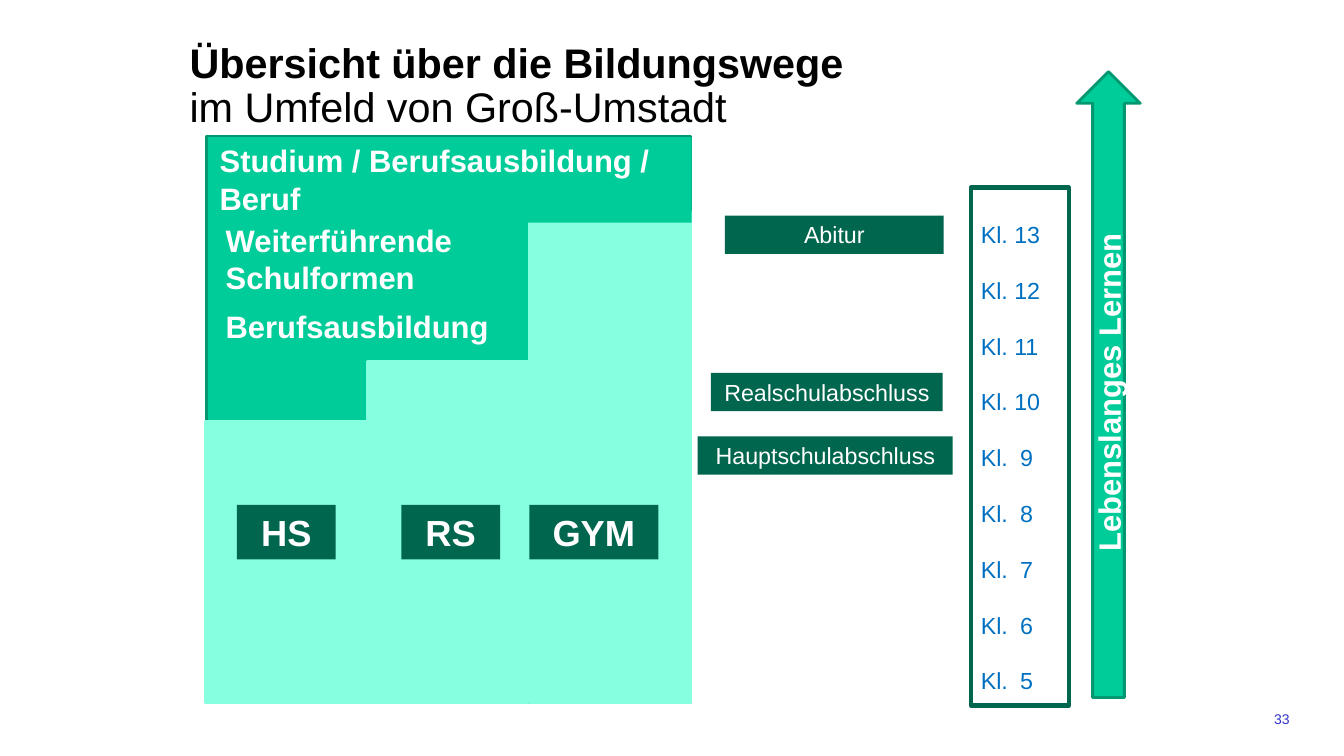
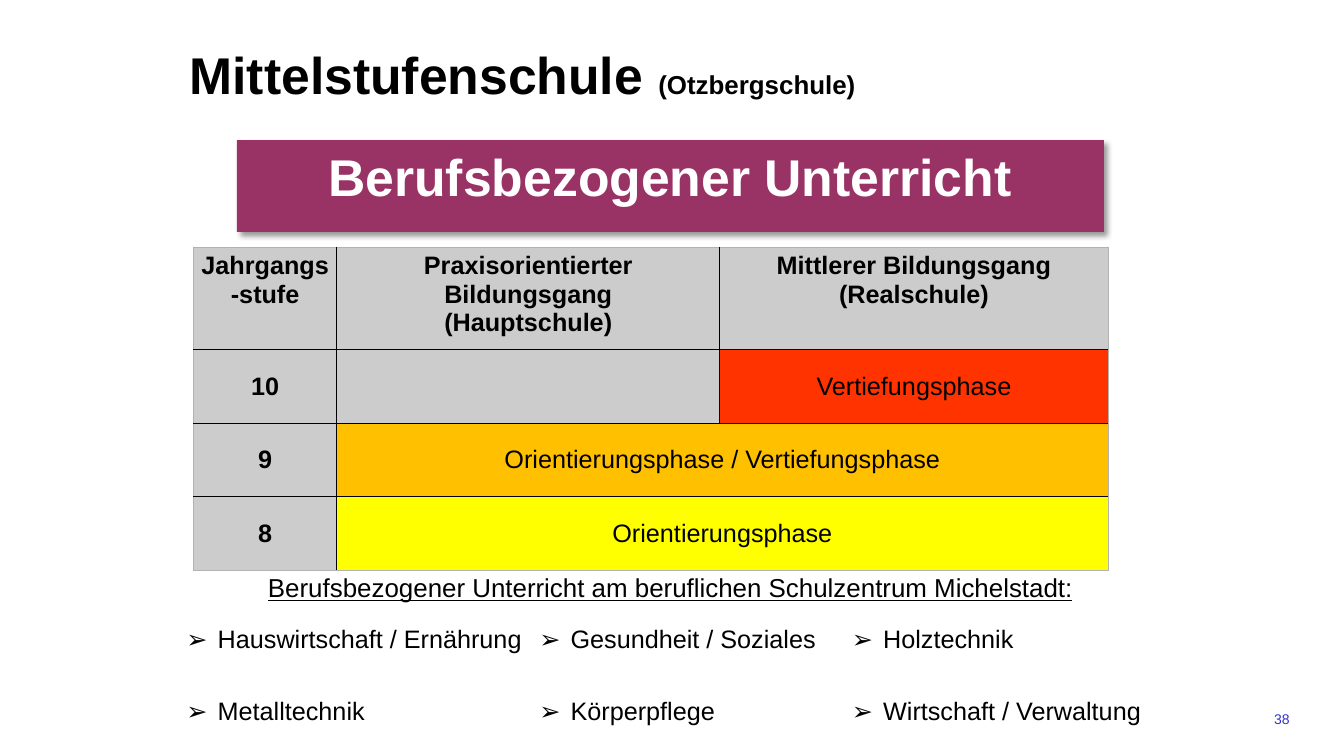
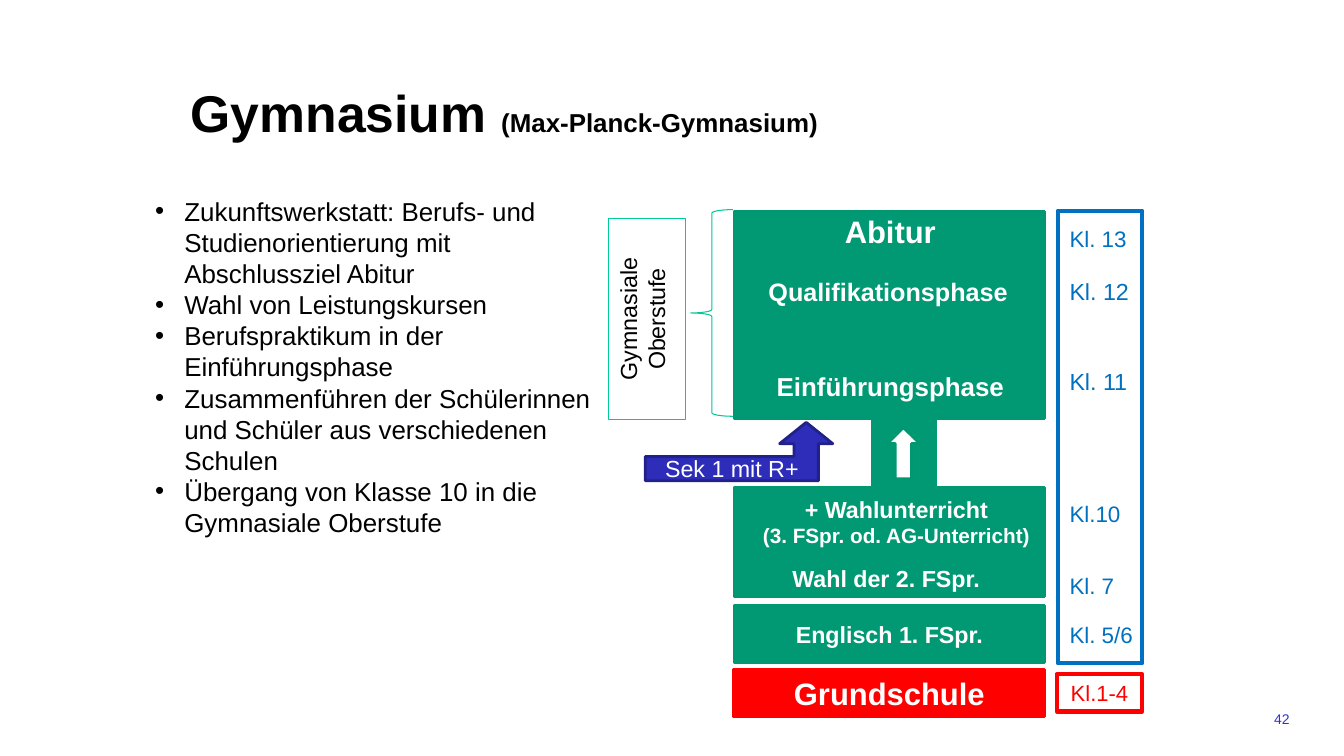
from dataclasses import dataclass
from typing import NamedTuple, Optional, Sequence, Union

import pptx
import pptx.dml.color
import pptx.enum.shapes
import pptx.enum.text
import pptx.oxml
import pptx.oxml.ns
import pptx.util

Inches = pptx.util.Inches
Pt = pptx.util.Pt
SHAPE = pptx.enum.shapes.MSO_SHAPE
ALIGN = pptx.enum.text.PP_ALIGN
ANCHOR = pptx.enum.text.MSO_ANCHOR
qn = pptx.oxml.ns.qn

FONT = "Arial"
COLORS = {
    "black": "000000", "white": "FFFFFF", "number": "3333CC",
    "green": "00CC99", "edge": "009771", "mint": "85FFE0", "forest": "00664D",
    "school": "009973", "brace": "00C896", "blue": "0070C0", "red": "FF0000",
    "indigo": "2D2DB9", "navy": "212189", "plum": "993366",
    "gray": "CCCCCC", "rim": "B2B2B2", "deepening": "FF3300",
    "mixed": "FFC000", "orientation": "FFFF00",
}
NO_STYLE = "{2D5ABB26-0587-4C30-8999-92F81FD0307C}"


class Area(NamedTuple):
    left: float
    top: float
    width: float
    height: float

    def lengths(self) -> list:
        return [Inches(value) for value in self]


class Run(NamedTuple):
    text: str
    size: Optional[float] = None
    bold: Optional[bool] = None


Paragraph = Union[str, Sequence[Run]]


@dataclass
class Label:
    text: str
    area: Area
    size: float = 16.6


@dataclass
class Cell:
    text: str
    fill: str
    bold: bool = False
    span: int = 1


def rgb(name: str) -> pptx.dml.color.RGBColor:
    return pptx.dml.color.RGBColor.from_string(COLORS[name])


def xml(markup: str):
    space = 'xmlns:a="http://schemas.openxmlformats.org/drawingml/2006/main"'
    tag, rest = markup[1:].split(" ", 1)
    return pptx.oxml.parse_xml(f"<{tag} {space} {rest}")


# Text
def write(frame, paragraphs: Sequence[Paragraph], *, size: float = 16.6,
          color: str = "white", bold: bool = False, underline: bool = False,
          align=ALIGN.LEFT, spacing: Optional[float] = None,
          bullet: str = "", indent: float = 0, tab: float = 0) -> None:
    for index, content in enumerate(paragraphs):
        paragraph = frame.paragraphs[0] if index == 0 else frame.add_paragraph()
        properties = paragraph._p.get_or_add_pPr()
        if bullet:
            properties.set("marL", str(Inches(indent)))
            properties.set("indent", str(-Inches(indent)))
            properties.append(xml(f'<a:buFont typeface="{FONT}"/>'))
            properties.append(xml(f'<a:buChar char="{bullet}"/>'))
        if tab:
            properties.append(xml(
                f'<a:tabLst ><a:tab pos="{Inches(tab)}" algn="l"/></a:tabLst>'))
        paragraph.alignment = align
        if spacing:
            paragraph.line_spacing = spacing
        for part in [Run(content)] if isinstance(content, str) else content:
            if part.text == "\n":
                paragraph.add_line_break()
                continue
            run = paragraph.add_run()
            run.text = part.text
            run.font.name = FONT
            run.font.size = Pt(part.size or size)
            run.font.bold = bold if part.bold is None else part.bold
            run.font.underline = underline
            run.font.color.rgb = rgb(color)


def set_frame(frame, anchor=ANCHOR.TOP, upward: bool = False) -> None:
    frame.word_wrap = True
    frame.auto_size = pptx.enum.text.MSO_AUTO_SIZE.NONE
    frame.vertical_anchor = anchor
    if upward:
        frame._txBody.bodyPr.set("vert", "vert270")


def add_text(slide, area: Area, paragraphs: Sequence[Paragraph], **style) -> None:
    frame = slide.shapes.add_textbox(*area.lengths()).text_frame
    set_frame(frame)
    write(frame, paragraphs, **style)


# Shapes
def add_block(slide, area: Area, paragraphs: Sequence[Paragraph] = (), *,
              fill: str = "", line: str = "", weight: float = 2,
              kind=SHAPE.RECTANGLE, anchor=ANCHOR.TOP, upward: bool = False,
              align=ALIGN.CENTER, **style):
    block = slide.shapes.add_shape(kind, *area.lengths())
    block.shadow.inherit = False
    if fill:
        block.fill.solid()
        block.fill.fore_color.rgb = rgb(fill)
    else:
        block.fill.background()
    if line:
        block.line.color.rgb = rgb(line)
        block.line.width = Pt(weight)
    else:
        block.line.fill.background()
    set_frame(block.text_frame, anchor, upward)
    write(block.text_frame, paragraphs, align=align, **style)
    return block


# Shared slide frame: title and page number
def start_slide(deck, number: int, area: Area, title: Sequence[Run], *,
                size: float = 36.9, anchor=ANCHOR.TOP):
    slide = deck.slides.add_slide(deck.slide_layouts[5])
    heading = slide.shapes.title
    heading.left, heading.top, heading.width, heading.height = area.lengths()
    set_frame(heading.text_frame, anchor)
    write(heading.text_frame, [title], size=size, color="black", bold=True,
          spacing=0.9)
    add_text(slide, Area(9.56, 7, 3.33, 0.33), [str(number)], size=10,
             color="number", align=ALIGN.RIGHT)
    return slide


# Tables
def add_grid(slide, area: Area, widths: Sequence[float],
             heights: Sequence[float]):
    table = slide.shapes.add_table(
        len(heights), len(widths), *area.lengths()).table
    table.first_row = table.horz_banding = False
    table._tbl.tblPr.find(qn("a:tableStyleId")).text = NO_STYLE
    for column, width in zip(table.columns, widths):
        column.width = Inches(width)
    for row, height in zip(table.rows, heights):
        row.height = Inches(height)
    for cell in table.iter_cells():
        cell.margin_left = cell.margin_right = Inches(0.07)
        cell.margin_top = cell.margin_bottom = Inches(0.05)
    return table


def add_borders(cell, outer: dict) -> None:
    properties = cell._tc.get_or_add_tcPr()
    for side in "LRTB":
        color, weight = ("rim", 0.5) if outer[side] else ("black", 1)
        properties.append(xml(
            f'<a:ln{side} w="{Pt(weight)}"><a:solidFill>'
            f'<a:srgbClr val="{COLORS[color]}"/></a:solidFill></a:ln{side}>'))


def add_phases(slide) -> None:
    rows = [
        [Cell("Jahrgangs-stufe", "gray", True),
         Cell("Praxisorientierter Bildungsgang\n(Hauptschule)", "gray", True),
         Cell("Mittlerer Bildungsgang\n(Realschule)", "gray", True)],
        [Cell("10", "gray", True), Cell("", "gray"),
         Cell("Vertiefungsphase", "deepening")],
        [Cell("9", "gray", True),
         Cell("Orientierungsphase / Vertiefungsphase", "mixed", span=2)],
        [Cell("8", "gray", True),
         Cell("Orientierungsphase", "orientation", span=2)],
    ]
    table = add_grid(slide, Area(1.92, 2.45, 9.07, 3.21), [1.42, 3.8, 3.85],
                     [1.02] + [0.73] * 3)
    for r, row in enumerate(rows):
        for c, content in enumerate(row):
            cell = table.cell(r, c)
            last = c + content.span - 1
            if content.span > 1:
                cell.merge(table.cell(r, last))
            add_borders(cell, {"L": c == 0, "R": last == 2,
                               "T": r == 0, "B": r == len(rows) - 1})
            cell.fill.solid()
            cell.fill.fore_color.rgb = rgb(content.fill)
            cell.vertical_anchor = ANCHOR.MIDDLE if r else ANCHOR.TOP
            write(cell.text_frame, content.text.split("\n"), size=18,
                  color="black", bold=content.bold, align=ALIGN.CENTER)


def add_subjects(slide) -> None:
    subjects = [
        ["Hauswirtschaft / Ernährung", "Gesundheit / Soziales", "Holztechnik"],
        ["Metalltechnik", "Körperpflege", "Wirtschaft / Verwaltung"],
    ]
    table = add_grid(slide, Area(1.78, 6.16, 9.9, 1.11), [3.5, 3.1, 3.3],
                     [0.71, 0.4])
    for r, row in enumerate(subjects):
        for c, subject in enumerate(row):
            cell = table.cell(r, c)
            cell.fill.background()
            write(cell.text_frame, [subject], size=18, color="black",
                  bullet="➢", indent=0.31)


# Slides
def build_overview(deck) -> None:
    slide = start_slide(
        deck, 33, Area(1.78, 0.37, 9.89, 1.16),
        [Run("Übersicht über die Bildungswege"), Run("\n"),
         Run("im Umfeld von Groß-Umstadt", bold=False)], size=29.5)

    # Staircase of school types
    add_block(slide, Area(2.05, 1.35, 4.8, 5.62), fill="green", line="edge")
    for step, top in enumerate([4.18, 3.59, 2.1]):
        add_block(slide, Area(2.04 + 1.605 * step, top, 1.6, 6.97 - top),
                  fill="mint", line="mint")
    for stage in [
        Label("Studium / Berufsausbildung / Beruf", Area(2.08, 1.36, 4.78, 0.85)),
        Label("Weiterführende Schulformen", Area(2.14, 2.15, 2.55, 0.85)),
        Label("Berufsausbildung", Area(2.14, 3, 2.83, 0.47)),
    ]:
        add_block(slide, stage.area, [stage.text], fill="green", size=22.1,
                  bold=True, align=ALIGN.LEFT)

    # Degrees and school names
    for label in [
        Label("Hauptschulabschluss", Area(6.92, 4.33, 2.53, 0.38)),
        Label("Realschulabschluss", Area(7.05, 3.7, 2.3, 0.38)),
        Label("Abitur", Area(7.19, 2.14, 2.17, 0.38)),
        Label("HS", Area(2.35, 5.01, 0.98, 0.54), 25.9),
        Label("RS", Area(3.98, 5.01, 0.98, 0.54), 25.9),
        Label("GYM", Area(5.25, 5.01, 1.28, 0.54), 25.9),
    ]:
        add_block(slide, label.area, [label.text], fill="forest",
                  size=label.size, bold=label.size > 20)

    # School years and lifelong learning
    years = [f"Kl. {year}" if year > 9 else f"Kl.\t{year}"
             for year in range(13, 4, -1)]
    add_block(slide, Area(9.63, 1.86, 0.97, 5.14), years, line="forest",
              weight=3, color="blue", align=ALIGN.LEFT, spacing=2, tab=0.39)
    add_block(slide, Area(10.68, 0.71, 0.63, 6.21), ["Lebenslanges Lernen"],
              kind=SHAPE.UP_ARROW, fill="green", line="edge", size=22.1,
              bold=True, anchor=ANCHOR.MIDDLE, upward=True)


def build_middle_school(deck) -> None:
    slide = start_slide(
        deck, 38, Area(1.78, 0.44, 9.89, 1.01),
        [Run("Mittelstufenschule "), Run("(Otzbergschule)", 18.5)])

    # Banner with a soft shadow
    banner = add_block(slide, Area(2.35, 1.39, 8.6, 0.91),
                       ["Berufsbezogener Unterricht"], fill="plum", size=36.9,
                       bold=True)
    banner._element.spPr.find(qn("a:effectLst")).append(xml(
        f'<a:outerShdw blurRad="{Pt(4)}" dist="{Pt(3)}" dir="2700000" '
        f'algn="tl" rotWithShape="0"><a:srgbClr val="{COLORS["black"]}">'
        '<a:alpha val="40000"/></a:srgbClr></a:outerShdw>'))

    add_phases(slide)
    add_text(slide, Area(2.34, 5.62, 8.61, 0.45),
             ["Berufsbezogener Unterricht am beruflichen Schulzentrum "
              "Michelstadt:"],
             size=18.5, color="black", underline=True, align=ALIGN.CENTER)
    add_subjects(slide)


def build_gymnasium(deck) -> None:
    slide = start_slide(
        deck, 42, Area(1.79, 0.48, 9.67, 1.34),
        [Run("Gymnasium "), Run("(Max-Planck-Gymnasium)", 18.5)],
        anchor=ANCHOR.MIDDLE)
    add_text(slide, Area(1.44, 1.89, 4.54, 3.52), [
        "Zukunftswerkstatt: Berufs- und Studienorientierung mit "
        "Abschlussziel Abitur",
        "Wahl von Leistungskursen",
        "Berufspraktikum in der Einführungsphase",
        "Zusammenführen der Schülerinnen und Schüler aus verschiedenen Schulen",
        "Übergang von Klasse 10 in die Gymnasiale Oberstufe",
    ], size=18.5, color="black", bullet="•", indent=0.29)

    # School years
    add_block(slide, Area(10.49, 2.09, 0.84, 4.49), line="blue", weight=3)
    for year, top, size in [
        ("Kl. 13", 2.18, 16), ("Kl. 12", 2.7, 16.6), ("Kl. 11", 3.59, 16.6),
        ("Kl.10", 4.91, 16), ("Kl. 7", 5.63, 16), ("Kl. 5/6", 6.11, 16),
    ]:
        add_text(slide, Area(10.51, top, 1, 0.38), [year], size=size,
                 color="blue")
    add_block(slide, Area(10.48, 6.69, 0.85, 0.37), ["Kl.1-4"], fill="white",
              line="red", weight=3, size=15.7, color="red",
              anchor=ANCHOR.MIDDLE)

    # Stages from primary school upwards
    add_block(slide, Area(7.28, 6.64, 3.08, 0.47), ["Grundschule"], fill="red",
              line="red", weight=2.25, size=22.1, bold=True,
              anchor=ANCHOR.MIDDLE)
    for top, height, text, anchor in [
        (6.01, 0.56, ["Englisch 1. FSpr."], ANCHOR.MIDDLE),
        (4.84, 1.08, ["Wahl der 2. FSpr. "], ANCHOR.BOTTOM),
        (2.1, 2.05, [], ANCHOR.TOP),
    ]:
        add_block(slide, Area(7.28, top, 3.08, height), text, fill="school",
                  line="edge", bold=True, anchor=anchor)
    for phase in [
        Label("Abitur", Area(7.4, 2.06, 2.86, 0.47), 22.1),
        Label("Qualifikationsphase", Area(7.38, 2.69, 2.86, 0.4), 18),
        Label("Einführungsphase", Area(7.4, 3.63, 2.86, 0.41), 18.5),
    ]:
        add_text(slide, phase.area, [phase.text], size=phase.size, bold=True,
                 align=ALIGN.CENTER)
    add_text(slide, Area(7.29, 4.86, 3.2, 0.63),
             ["+ Wahlunterricht", [Run("(3. FSpr. od. AG-Unterricht)", 14.8)]],
             bold=True, align=ALIGN.CENTER)

    # Upper school bracket
    add_block(slide, Area(6.85, 2.08, 0.42, 2.05), kind=SHAPE.LEFT_BRACE,
              line="brace", weight=0.75)
    add_block(slide, Area(6.04, 2.17, 0.76, 1.99), ["Gymnasiale Oberstufe"],
              line="green", weight=0.75, color="black", upward=True)

    # Ways into the upper school
    entry = add_block(slide, Area(6.4, 4.19, 1.86, 0.58), ["Sek 1 mit R+"],
                      kind=SHAPE.BENT_UP_ARROW, fill="indigo", line="navy",
                      anchor=ANCHOR.MIDDLE)
    for index, value in enumerate([0.417, 0.454, 0.365]):
        entry.adjustments[index] = value
    add_block(slide, Area(8.65, 4.15, 0.63, 0.69), fill="school", line="school")
    add_block(slide, Area(8.8, 4.24, 0.32, 0.51), kind=SHAPE.UP_ARROW,
              fill="white", line="edge")


def main() -> None:
    deck = pptx.Presentation()
    deck.slide_width, deck.slide_height = Inches(13.33), Inches(7.5)
    build_overview(deck)
    build_middle_school(deck)
    build_gymnasium(deck)
    deck.save("out.pptx")


if __name__ == "__main__":
    main()
